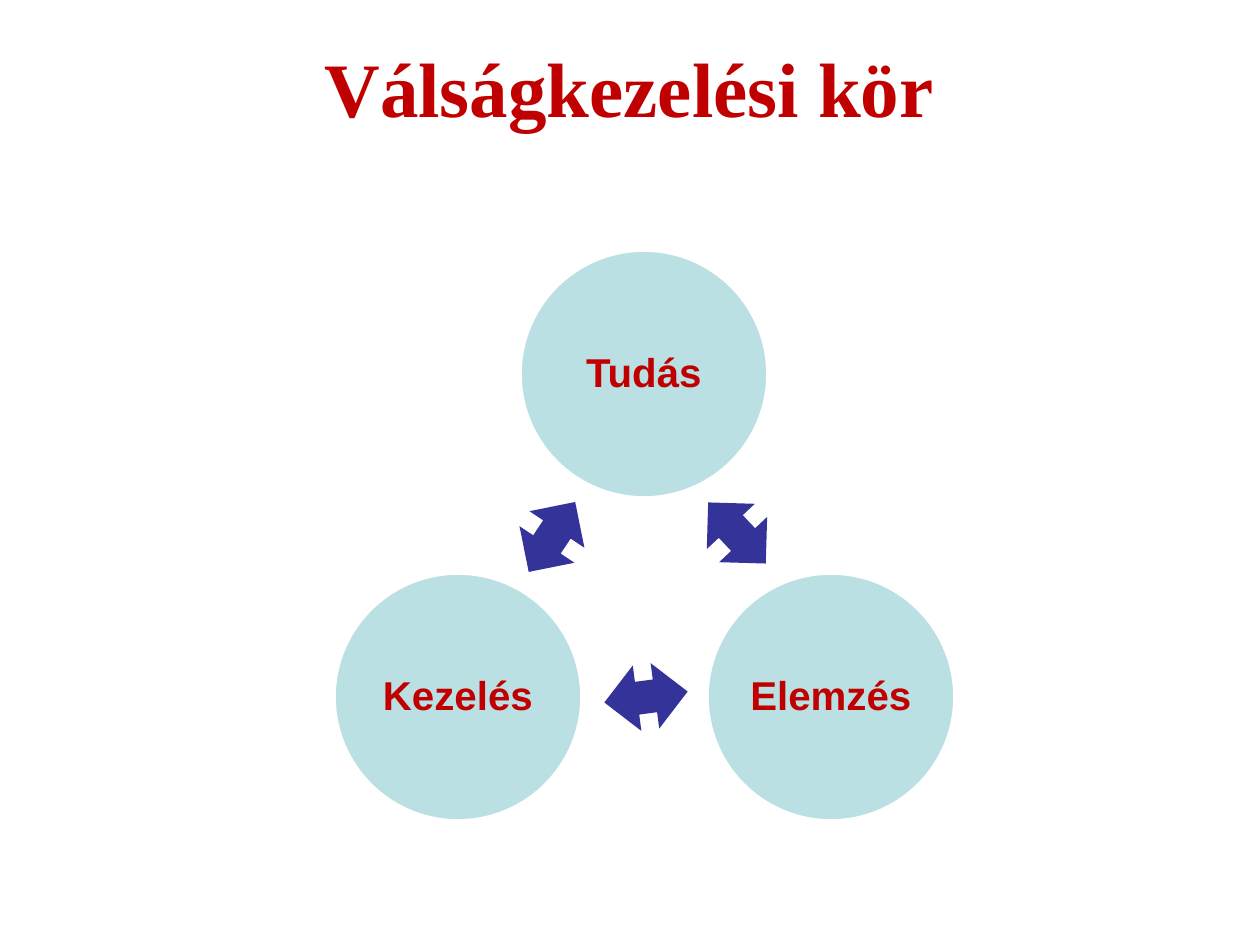
"""Build the crisis management cycle slide."""
from pptx import Presentation
from pptx import util as u
from pptx.dml.color import RGBColor
from pptx.enum import shapes, text

PX = 914400 // 126
RED = RGBColor(0xC0, 0x00, 0x00)
TEAL = RGBColor(0xBB, 0xE0, 0xE3)
NAVY = RGBColor(0x33, 0x33, 0x99)
WHITE = RGBColor(0xFF, 0xFF, 0xFF)
DIAMETER = 248
ARROW_W, ARROW_H = 66, 84


def write(sp, words, font, size, inset):
    tf = sp.text_frame
    tf.word_wrap = True
    tf.vertical_anchor = text.MSO_ANCHOR.MIDDLE
    tf.margin_left = tf.margin_right = tf.margin_top = tf.margin_bottom = inset * PX
    p = tf.paragraphs[0]
    p.text = words
    p.alignment = text.PP_ALIGN.CENTER
    p.font.name = font
    p.font.size = u.Pt(size)
    p.font.bold = True
    p.font.color.rgb = RED
    return p


def add_centred(kind, x, y, w, h, fill):
    sp = s.shapes.add_shape(kind, (x - w // 2) * PX, (y - h // 2) * PX, w * PX, h * PX)
    sp.shadow.inherit = False
    sp.fill.solid()
    sp.fill.fore_color.rgb = fill
    return sp


prs = Presentation()
prs.slide_width, prs.slide_height = u.Inches(10), u.Inches(7.5)
s = prs.slides.add_slide(prs.slide_layouts[6])

title = s.shapes.add_textbox(107 * PX, 8 * PX, 1045 * PX, 157 * PX)
write(title, "Válságkezelési kör", "Times New Roman", 44, 6)

for label, x, y in [("Tudás", 644, 374), ("Elemzés", 831, 697), ("Kezelés", 458, 697)]:
    sp = add_centred(shapes.MSO_SHAPE.OVAL, x, y, DIAMETER, DIAMETER, TEAL)
    sp.line.color.rgb = WHITE
    sp.line.width = u.Pt(2.08)
    write(sp, label, "Arial", 23, 4).line_spacing = 0.9

for x, y, angle in [(737, 533, 316.7), (646, 697, 262.5), (552, 537, 33.6)]:
    sp = add_centred(shapes.MSO_SHAPE.UP_DOWN_ARROW, x, y, ARROW_W, ARROW_H, NAVY)
    sp.line.fill.background()
    sp.rotation = angle

prs.save("out.pptx")
